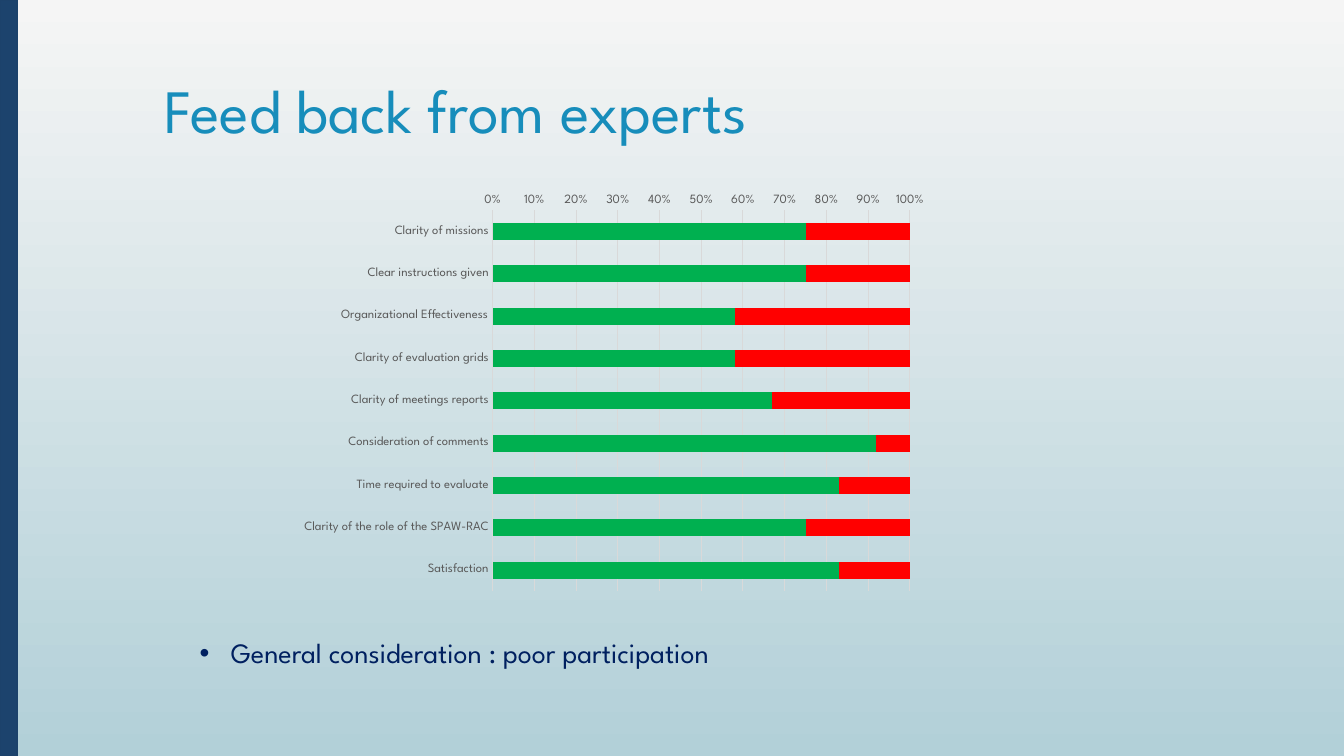
from dataclasses import dataclass

from pptx import Presentation
from pptx import util as u
from pptx.chart import data as chart_data
from pptx.dml import color
from pptx.enum import chart as charts, shapes, text
from pptx.oxml import ns
from lxml import etree


@dataclass(frozen=True)
class Theme:
    font: str = "League Spartan"
    sky: str = "F5F5F5"
    water: str = "B2D0D8"
    bar: str = "1C436D"
    bar_line: str = "1C426B"
    title: str = "178DBB"
    body: str = "002060"
    label: str = "595959"
    grid: str = "D9D9D9"
    positive: str = "00B050"
    negative: str = "FF0000"
    title_size: int = 44
    body_size: int = 20
    label_size: int = 9


def rgb(value):
    return color.RGBColor.from_string(value)


class SlideBuilder:
    def __init__(self, page, theme):
        self.page = page
        self.theme = theme

    def place(self, shape, left, top, width, height):
        shape.left, shape.top = u.Inches(left), u.Inches(top)
        shape.width, shape.height = u.Inches(width), u.Inches(height)

    def style(self, font, size, colour):
        font.name = self.theme.font
        font.size = u.Pt(size)
        font.color.rgb = rgb(colour)

    def background(self):
        fill = self.page.background.fill
        fill.gradient()
        fill.gradient_angle = 270
        for stop, shade in zip(fill.gradient_stops, (self.theme.sky, self.theme.water)):
            stop.color.rgb = rgb(shade)

    def side_bar(self, width, height):
        bar = self.page.shapes.add_shape(
            shapes.MSO_SHAPE.RECTANGLE, 0, 0, u.Inches(width), u.Inches(height))
        bar.shadow.inherit = False
        bar.fill.solid()
        bar.fill.fore_color.rgb = rgb(self.theme.bar)
        bar.line.color.rgb = rgb(self.theme.bar_line)
        bar.line.width = u.Pt(1)

    def fill_text(self, box, wording, size, colour, anchor):
        """Fill a placeholder with one styled paragraph and return that paragraph."""
        frame = box.text_frame
        frame.word_wrap = True
        frame.auto_size = text.MSO_AUTO_SIZE.NONE
        frame.vertical_anchor = anchor
        para = frame.paragraphs[0]
        span = para.add_run()
        span.text = wording
        self.style(span.font, size, colour)
        return para

    def title(self, wording, *area):
        box = self.page.shapes.title
        self.place(box, *area)
        para = self.fill_text(box, wording, self.theme.title_size, self.theme.title,
                              text.MSO_ANCHOR.MIDDLE)
        para.alignment = text.PP_ALIGN.LEFT
        para.line_spacing = 0.9

    def bullet(self, wording, *area):
        box = self.page.placeholders[1]
        self.place(box, *area)
        para = self.fill_text(box, wording, self.theme.body_size, self.theme.body,
                              text.MSO_ANCHOR.BOTTOM)
        box.text_frame.margin_bottom = u.Inches(0.2)
        indent = u.Inches(0.31)
        properties = para._p.get_or_add_pPr()
        properties.set("marL", str(indent))
        properties.set("indent", str(-indent))
        etree.SubElement(properties, ns.qn("a:buChar"), char="•")
        para.alignment = text.PP_ALIGN.JUSTIFY
        para.line_spacing = 1.1
        para.space_before = u.Pt(0)

    def stacked_bars(self, categories, series, *area):
        """Add a 100 % stacked bar chart; series is a list of (name, values, colour)."""
        data = chart_data.CategoryChartData()
        data.categories = categories
        for name, values, _ in series:
            data.add_series(name, values)
        chart = self.page.shapes.add_chart(
            charts.XL_CHART_TYPE.BAR_STACKED_100, *map(u.Inches, area), data).chart
        self.style(chart.font, self.theme.label_size, self.theme.label)
        chart.has_legend = False
        chart.has_title = False
        plot = chart.plots[0]
        plot.gap_width = 150
        plot.overlap = 100
        plot.vary_by_categories = False
        for bars, (_, _, colour) in zip(plot.series, series):
            bars.format.fill.solid()
            bars.format.fill.fore_color.rgb = rgb(colour)
        for axis in (chart.category_axis, chart.value_axis):
            axis.major_tick_mark = axis.minor_tick_mark = charts.XL_TICK_MARK.NONE
            self.style(axis.tick_labels.font, self.theme.label_size, self.theme.label)
        chart.category_axis.reverse_order = True
        chart.value_axis.major_unit = 0.1
        chart.value_axis.tick_labels.number_format = "0%"
        chart.value_axis.tick_labels.number_format_is_linked = False
        chart.value_axis.format.line.fill.background()
        for line in (chart.category_axis.format.line,
                     chart.value_axis.major_gridlines.format.line):
            line.color.rgb = rgb(self.theme.grid)
            line.width = u.Pt(0.75)


def main():
    deck = Presentation()
    deck.slide_width, deck.slide_height = u.Inches(13.33), u.Inches(7.5)
    theme = Theme()
    builder = SlideBuilder(deck.slides.add_slide(deck.slide_layouts[1]), theme)

    satisfied = {
        "Clarity of missions": 75,
        "Clear instructions given": 75,
        "Organizational Effectiveness": 58,
        "Clarity of evaluation grids": 58,
        "Clarity of meetings reports": 67,
        "Consideration of comments": 92,
        "Time required to evaluate": 83,
        "Clarity of the role of the SPAW-RAC": 75,
        "Satisfaction": 83,
    }
    shares = list(satisfied.values())
    series = [
        ("Series 1", shares, theme.positive),
        ("Series 2", [100 - share for share in shares], theme.negative),
    ]

    builder.background()
    builder.side_bar(0.17, 7.5)
    builder.title("Feed back from experts", 1.53, 0.4, 10.72, 1.45)
    builder.stacked_bars(list(satisfied), series, 2.89, 1.85, 6.4, 4.1)
    builder.bullet("General consideration : poor participation", 1.88, 5.7, 10.72, 1.14)
    deck.save("out.pptx")


if __name__ == "__main__":
    main()
